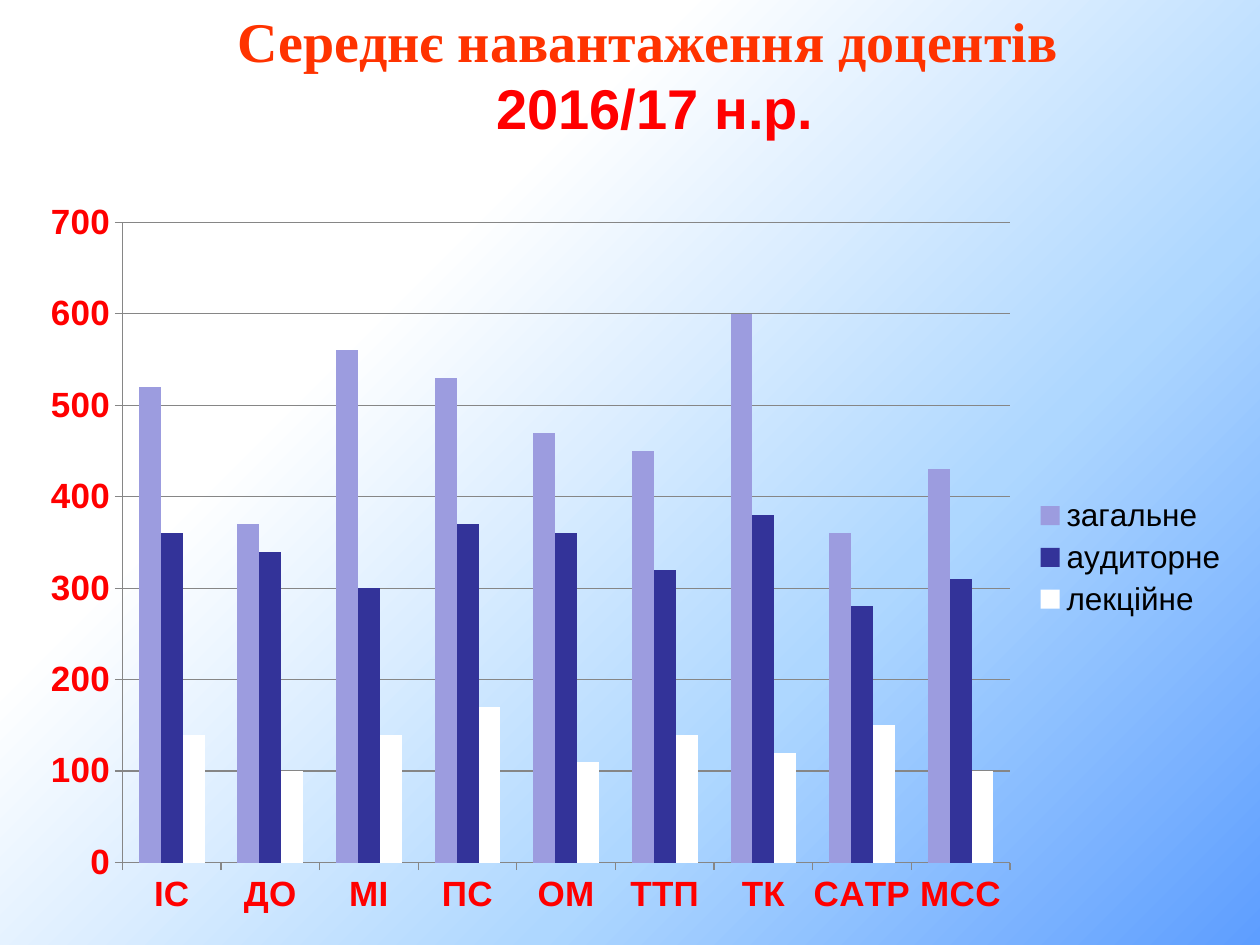
"""Build a slide with a column chart of the average teaching load."""
from lxml import etree
from pptx import Presentation
from pptx.chart.data import CategoryChartData
from pptx.dml.color import RGBColor
from pptx.enum.chart import XL_CHART_TYPE, XL_LEGEND_POSITION, XL_TICK_MARK
from pptx.enum.text import PP_ALIGN
from pptx.oxml import parse_xml
from pptx.oxml.ns import nsdecls, qn
from pptx.util import Pt

COLUMNS = XL_CHART_TYPE.COLUMN_CLUSTERED
RIGHT = XL_LEGEND_POSITION.RIGHT
OUTSIDE = XL_TICK_MARK.OUTSIDE
CENTER = PP_ALIGN.CENTER

BACKGROUND = [(0, "5E9EFF"), (33, "AED7FF"), (69, "FFFFFF"), (100, "FFFFFF")]
TITLE = [
    ("Середнє навантаження доцентів ", "Times New Roman", "FF3300"),
    ("2016/17 н.р.", "Arial", "FF0000"),
]
DEPARTMENTS = ["ІС", "ДО", "МІ", "ПС", "ОМ", "ТТП", "ТК", "САТР", "МСС"]
LOADS = [
    ("загальне", "9C9CDF", [520, 370, 560, 530, 470, 450, 600, 360, 430]),
    ("аудиторне", "333399", [360, 340, 300, 370, 360, 320, 380, 280, 310]),
    ("лекційне", "FFFFFF", [140, 100, 140, 170, 110, 140, 120, 150, 100]),
]
PLOT_AREA = {"x": 0.08, "y": 0.05, "w": 0.73, "h": 0.86}


def color(code):
    return RGBColor.from_string(code)


def apply(target, values):
    for name, value in values.items():
        setattr(target, name, value)


class SlideBuilder:
    def __init__(self, slide):
        self.slide = slide
        self.title_size = Pt(32)
        self.axis_size = Pt(20)
        self.legend_size = Pt(18)
        self.accent = "FF0000"
        self.grid = "868686"

    def font(self, font, code, **values):
        apply(font, values)
        font.color.rgb = color(code)

    def background(self, stops):
        fill = self.slide.background.fill
        fill.gradient()
        marks = "".join(
            f'<a:gs pos="{place * 1000}"><a:srgbClr val="{code}"/></a:gs>'
            for place, code in stops)
        gradient = parse_xml(
            f'<a:gradFill {nsdecls("a")} rotWithShape="0"><a:gsLst>{marks}</a:gsLst>'
            '<a:path path="circle"><a:fillToRect l="100000" t="100000"/></a:path>'
            '</a:gradFill>')
        old = next(self.slide.element.iter(qn("a:gradFill")))
        old.getparent().replace(old, gradient)

    def title(self, lines, left, top, width, height):
        box = self.slide.shapes.add_textbox(Pt(left), Pt(top), Pt(width), Pt(height))
        frame = box.text_frame
        frame.word_wrap = True
        for index, (text, face, code) in enumerate(lines):
            para = frame.add_paragraph() if index else frame.paragraphs[0]
            para.alignment = CENTER
            span = para.add_run()
            span.text = text
            self.font(span.font, code, name=face, size=self.title_size, bold=True)

    def axis(self, axis):
        apply(axis, {"major_tick_mark": OUTSIDE})
        self.font(axis.tick_labels.font, self.accent, size=self.axis_size, bold=True)
        self.line(axis.format.line)

    def line(self, line):
        line.color.rgb = color(self.grid)
        line.width = Pt(0.75)

    def plot_layout(self, chart, edges):
        area = next(chart.element.iter(qn("c:plotArea")))
        for old in area.findall(qn("c:layout")):
            area.remove(old)
        layout = etree.Element(qn("c:layout"))
        manual = etree.SubElement(layout, qn("c:manualLayout"))
        modes = {"layoutTarget": "inner", "xMode": "edge", "yMode": "edge"}
        for tag, value in {**modes, **edges}.items():
            etree.SubElement(manual, qn(f"c:{tag}")).set("val", str(value))
        area.insert(0, layout)

    def chart(self, categories, loads, left, top, width, height):
        data = CategoryChartData()
        data.categories = categories
        for name, _, values in loads:
            data.add_series(name, values)
        chart = self.slide.shapes.add_chart(
            COLUMNS, Pt(left), Pt(top), Pt(width), Pt(height), data).chart
        self.font(chart.font, "000000", name="Arial", size=Pt(10))
        apply(chart, {"has_title": False, "has_legend": True})
        apply(chart.legend, {"position": RIGHT, "include_in_layout": False})
        self.font(chart.legend.font, "000000", size=self.legend_size)
        apply(chart.plots[0], {"gap_width": 150, "overlap": 0, "vary_by_categories": False})
        for series, (_, code, _) in zip(chart.plots[0].series, loads):
            series.format.fill.solid()
            series.format.fill.fore_color.rgb = color(code)
            series.invert_if_negative = False
        self.axis(chart.category_axis)
        self.axis(chart.value_axis)
        apply(chart.value_axis, {"minimum_scale": 0, "maximum_scale": 700,
                                 "major_unit": 100, "has_major_gridlines": True})
        self.line(chart.value_axis.major_gridlines.format.line)
        self.plot_layout(chart, PLOT_AREA)


def main():
    deck = Presentation()
    apply(deck, {"slide_width": Pt(720), "slide_height": Pt(540)})
    page = SlideBuilder(deck.slides.add_slide(deck.slide_layouts[6]))
    page.background(BACKGROUND)
    page.title(TITLE, 39.6, 0, 669.6, 85)
    page.chart(DEPARTMENTS, LOADS, 14.4, 105.8, 694.8, 425.5)
    deck.save("out.pptx")


if __name__ == "__main__":
    main()
